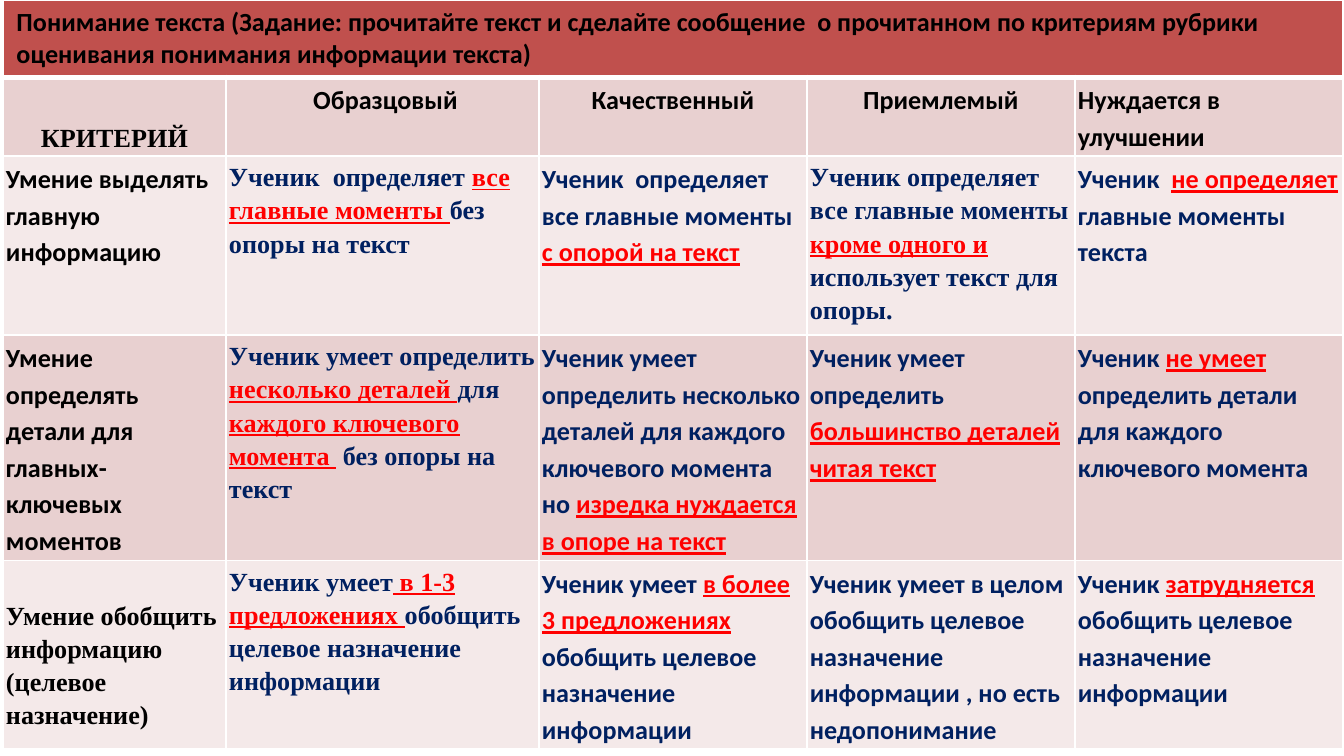
import pptx
import pptx.dml.color
import pptx.enum.text
import pptx.oxml
import pptx.oxml.ns
import pptx.util

PX = 914400 / 134.4
SANS, SERIF = "Calibri", "Times New Roman"
BLACK, NAVY, RED, WHITE = "000000", "002060", "FF0000", "FFFFFF"
DARK, MID, PALE = "C0504D", "E8D0D0", "F4E9E9"
ALIGN = pptx.enum.text.PP_ALIGN
ANCHOR = pptx.enum.text.MSO_ANCHOR

COLS = [223, 313, 268, 268, 268]
ROWS = [77, 78, 179, 225, 188]
TITLE = ("Понимание текста (Задание: прочитайте текст и сделайте сообщение  о прочитанном "
         "по критериям рубрики оценивания понимания информации текста)")

# Underscores enclose the red underlined words; a line break starts a paragraph
GRID = [
    ["КРИТЕРИЙ", " Образцовый", "Качественный", "Приемлемый", "Нуждается в улучшении"],
    ["Умение выделять главную информацию",
     "Ученик  определяет _все главные моменты _без опоры на текст",
     "Ученик  определяет все главные моменты\n_с опорой на текст_",
     "Ученик определяет все главные моменты\n_кроме одного и _использует текст для опоры.",
     "Ученик  _не определяет _главные моменты текста"],
    ["Умение определять детали для главных- ключевых моментов",
     "Ученик умеет определить _несколько деталей _для "
     "_каждого ключевого момента _ без опоры на текст",
     "Ученик умеет определить несколько деталей для каждого ключевого момента но "
     "_изредка нуждается в опоре на текст_",
     "Ученик умеет определить _большинство деталей читая текст_",
     "Ученик _не умеет _определить детали для каждого ключевого момента"],
    ["Умение обобщить информацию\n(целевое назначение)",
     "Ученик умеет_ в 1-3 предложениях _обобщить целевое назначение информации",
     "Ученик умеет _в более 3 предложениях _обобщить целевое назначение информации",
     "Ученик умеет в целом обобщить целевое назначение информации , но есть недопонимание",
     "Ученик _затрудняется _обобщить целевое назначение информации"],
]
# Cells set in the serif face, as (row, column) of the grid
SERIFS = {(0, 0), (1, 1), (2, 1), (3, 1), (1, 3), (3, 0)}


def px(num):
    return pptx.util.Emu(round(num * PX))


def tint(code):
    return pptx.dml.color.RGBColor.from_string(code)


def put(obj, vals):
    for key, val in vals.items():
        setattr(obj, key, val)


class Deck:
    font = {"size": pptx.util.Pt(14), "bold": True}
    inset = {"margin_left": px(3), "margin_right": px(3),
             "margin_top": px(3), "margin_bottom": px(3)}

    def __init__(self, wide, high):
        self.file = pptx.Presentation()
        put(self.file, {"slide_width": px(wide), "slide_height": px(high)})
        self.slide = self.file.slides.add_slide(self.file.slide_layouts[6])

    def table(self, left, top, cols, rows):
        frame = self.slide.shapes.add_table(len(rows), len(cols), px(left), px(top),
                                            px(sum(cols)), px(sum(rows)))
        table = frame.table
        put(table, {"first_row": False, "horz_banding": False})
        for col, wide in zip(table.columns, cols):
            col.width = px(wide)
        for row, high in zip(table.rows, rows):
            row.height = px(high)
        return table

    def paint(self, cell, fill, top=1, bottom=1):
        props = cell._tc.get_or_add_tcPr()
        for side, size in {"L": 1, "R": 1, "T": top, "B": bottom}.items():
            props.append(pptx.oxml.parse_xml(
                f'<a:ln{side} {pptx.oxml.ns.nsdecls("a")} w="{size * 12700}"><a:solidFill>'
                f'<a:srgbClr val="{WHITE}"/></a:solidFill></a:ln{side}>'))
        cell.fill.solid()
        cell.fill.fore_color.rgb = tint(fill)

    def text(self, cell, words, face, color, **form):
        frame = cell.text_frame
        for num, line in enumerate(words.split("\n")):
            para = frame.add_paragraph() if num else frame.paragraphs[0]
            put(para, form)
            for part, piece in enumerate(line.split("_")):
                if not piece:
                    continue
                run = para.add_run()
                run.text = piece
                put(run.font, {**self.font, "name": face})
                run.font.color.rgb = tint(RED if part % 2 else color)
                if part % 2:
                    run.font.underline = True

    def save(self):
        self.file.save("out.pptx")


def main():
    deck = Deck(1344, 756)
    table = deck.table(3, 0, COLS, ROWS)

    # Task across the top
    for col in range(len(COLS)):
        deck.paint(table.cell(0, col), DARK, bottom=3)
    head = table.cell(0, 0)
    head.merge(table.cell(0, len(COLS) - 1))
    deck.text(head, TITLE, SANS, BLACK)

    # Rubric: level names, then one criterion a row
    for row, line in enumerate(GRID):
        for col, words in enumerate(line):
            cell = table.cell(row + 1, col)
            put(cell, deck.inset)
            deck.paint(cell, PALE if row % 2 else MID, top=1 if row else 3)
            form = {"line_spacing": 1.15}
            if row == 0 and col < 4:
                form["alignment"] = ALIGN.CENTER
            if row == 0 and col:
                form["space_after"] = pptx.util.Pt(10)
            face = SERIF if (row, col) in SERIFS else SANS
            deck.text(cell, words, face, NAVY if row and col else BLACK, **form)

    # Criterion cells that sit lower
    table.cell(1, 0).vertical_anchor = ANCHOR.BOTTOM
    table.cell(4, 0).margin_top = px(37)
    deck.save()


if __name__ == "__main__":
    main()
